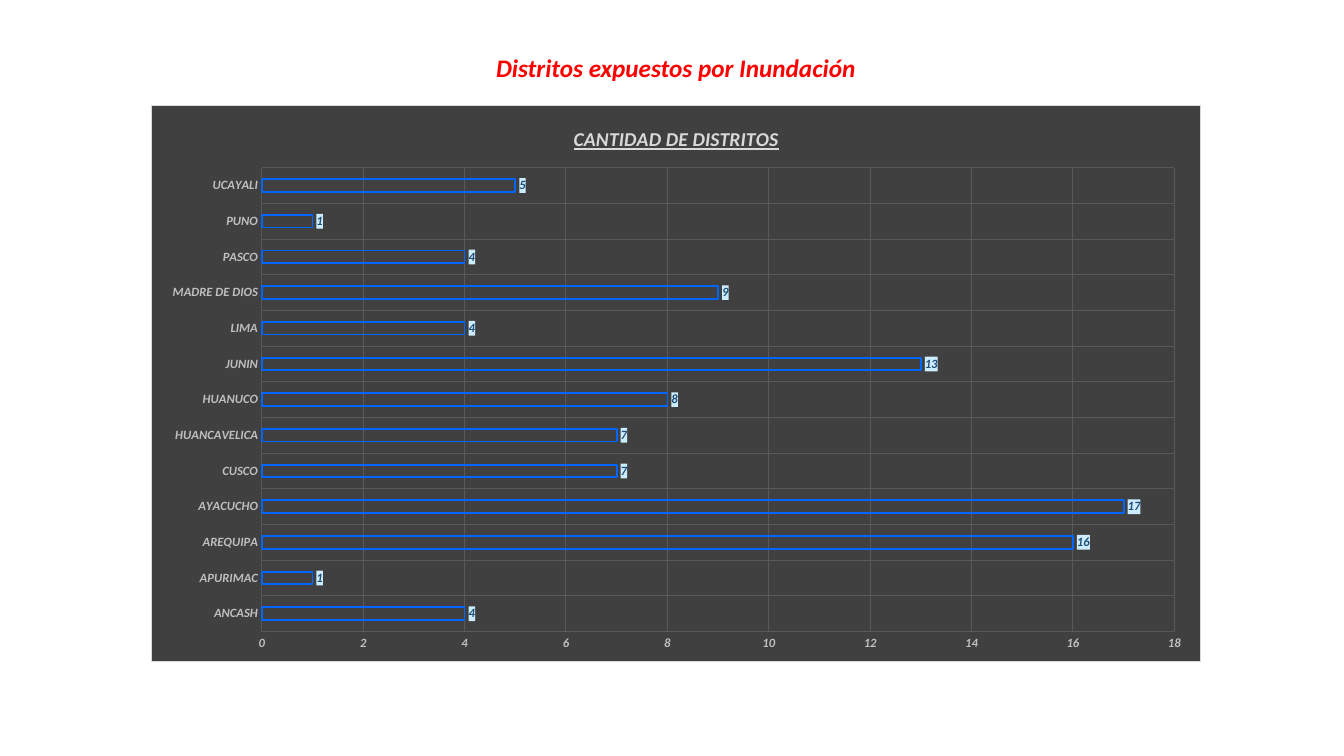
from pptx import Presentation
from pptx.chart.data import CategoryChartData
from pptx.dml.color import RGBColor
from pptx.enum.chart import XL_CHART_TYPE, XL_LABEL_POSITION, XL_TICK_MARK
from pptx.enum.text import MSO_ANCHOR, MSO_AUTO_SIZE, PP_ALIGN
from pptx.oxml import parse_xml
from pptx.oxml.ns import nsdecls, qn
from pptx.util import Pt

THEME = {
    "font": "Calibri",
    "title": (18, "FF0000"),
    "chart_title": (14, "D9D9D9"),
    "axis": (9, "BFBFBF"),
    "label": (9, "1F4E79"),
    "label_fill": "CCECFF",
    "panel": "404040",
    "border": "D9D9D9",
    "grid": "595959",
    "bar": "0066FF",
}

DISTRICTS = {
    "ANCASH": 4,
    "APURIMAC": 1,
    "AREQUIPA": 16,
    "AYACUCHO": 17,
    "CUSCO": 7,
    "HUANCAVELICA": 7,
    "HUANUCO": 8,
    "JUNIN": 13,
    "LIMA": 4,
    "MADRE DE DIOS": 9,
    "PASCO": 4,
    "PUNO": 1,
    "UCAYALI": 5,
}


def style_font(font, role):
    size, color = THEME[role]
    font.name = THEME["font"]
    font.size = Pt(size)
    font.bold = True
    font.italic = True
    font.color.rgb = RGBColor.from_string(color)


def shape_props(fill, line=None):
    outline = (
        f'<a:ln w="{Pt(0.75)}"><a:solidFill><a:srgbClr val="{line}"/></a:solidFill></a:ln>'
        if line else "<a:ln><a:noFill/></a:ln>"
    )
    return parse_xml(
        f'<c:spPr {nsdecls("c", "a")}><a:solidFill><a:srgbClr val="{fill}"/>'
        f"</a:solidFill>{outline}</c:spPr>"
    )


prs = Presentation()
prs.slide_width, prs.slide_height = Pt(960), Pt(540)
s = prs.slides.add_slide(prs.slide_layouts[5])

sp = s.shapes.title
sp.left, sp.top, sp.width, sp.height = Pt(345.6), Pt(34), Pt(274.4), Pt(29)
tf = sp.text_frame
tf.word_wrap = False
tf.auto_size = MSO_AUTO_SIZE.SHAPE_TO_FIT_TEXT
tf.vertical_anchor = MSO_ANCHOR.TOP
p = tf.paragraphs[0]
p.alignment = PP_ALIGN.CENTER
r = p.add_run()
r.text = "Distritos expuestos por Inundación"
style_font(r.font, "title")

data = CategoryChartData(number_format="#,##0")
data.categories = list(DISTRICTS)
data.add_series("CANTIDAD DE DISTRITOS", list(DISTRICTS.values()))
chart = s.shapes.add_chart(
    XL_CHART_TYPE.BAR_CLUSTERED, Pt(108), Pt(75), Pt(750), Pt(398), data
).chart
chart.has_legend = False
chart.font.name = THEME["font"]
chart.font.size = Pt(10)
chart._chartSpace.find(qn("c:chart")).addnext(shape_props(THEME["panel"], THEME["border"]))

chart.has_title = True
chart.chart_title.include_in_layout = False
r = chart.chart_title.text_frame.paragraphs[0].add_run()
r.text = "CANTIDAD DE DISTRITOS"
style_font(r.font, "chart_title")
r.font.underline = True

for axis in (chart.category_axis, chart.value_axis):
    axis.major_tick_mark = XL_TICK_MARK.NONE
    axis.minor_tick_mark = XL_TICK_MARK.NONE
    axis.format.line.fill.background()
    axis.has_major_gridlines = True
    grid = axis.major_gridlines.format.line
    grid.width = Pt(0.75)
    grid.color.rgb = RGBColor.from_string(THEME["grid"])
    style_font(axis.tick_labels.font, "axis")
chart.value_axis.minimum_scale = 0
chart.value_axis.maximum_scale = 18
chart.value_axis.major_unit = 2

plot = chart.plots[0]
plot.gap_width = 182
plot.overlap = -50
plot.vary_by_categories = False
bars = plot.series[0]
bars.format.fill.background()
bars.format.line.width = Pt(1.25)
bars.format.line.color.rgb = RGBColor.from_string(THEME["bar"])

labels = bars.data_labels
labels.show_value = True
labels.position = XL_LABEL_POSITION.OUTSIDE_END
labels.number_format = "#,##0"
labels.number_format_is_linked = False
style_font(labels.font, "label")
labels._element.find(qn("c:txPr")).addprevious(shape_props(THEME["label_fill"]))

area = chart._chartSpace.chart.plotArea
for old in area.findall(qn("c:layout")):
    area.remove(old)
area.insert(0, parse_xml(
    f'<c:layout {nsdecls("c")}><c:manualLayout><c:layoutTarget val="inner"/>'
    '<c:xMode val="edge"/><c:yMode val="edge"/><c:x val="0.105"/><c:y val="0.112"/>'
    '<c:w val="0.87"/><c:h val="0.834"/></c:manualLayout></c:layout>'
))

prs.save("out.pptx")
